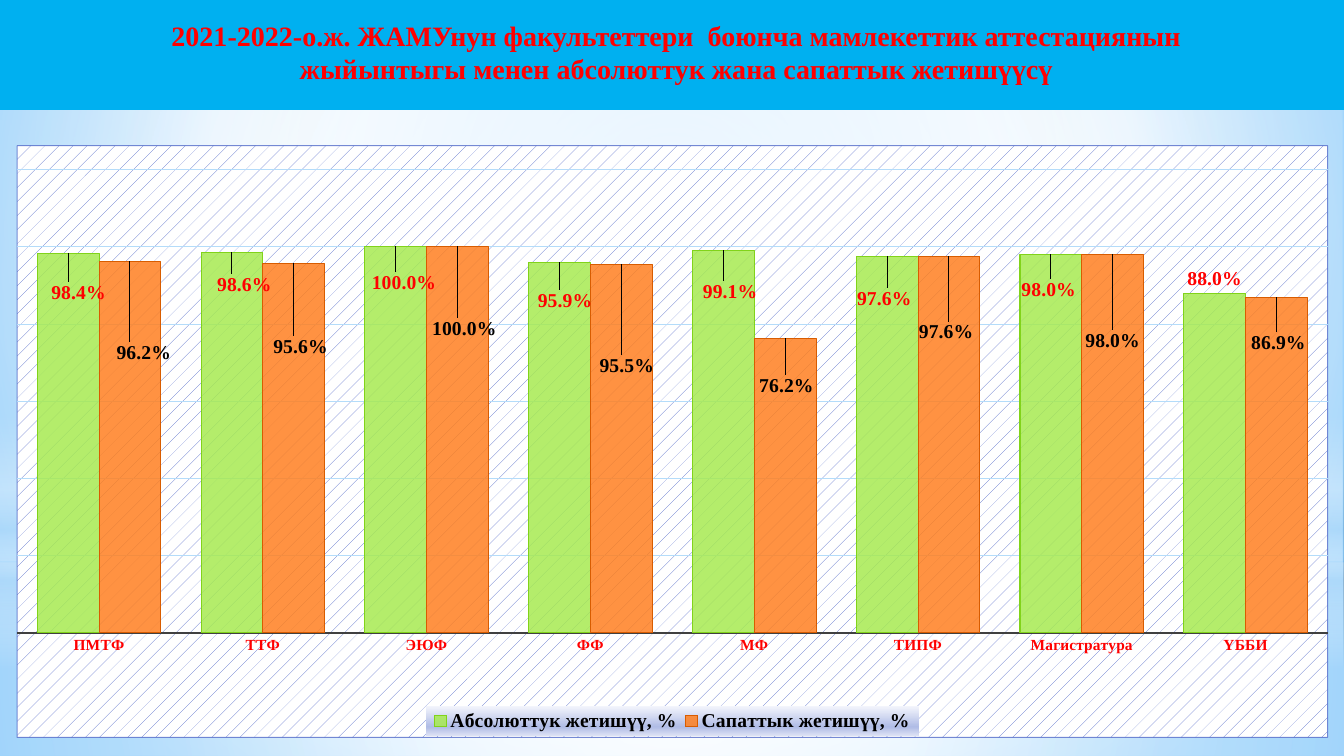
from pptx import Presentation
from pptx.chart.data import CategoryChartData
from pptx.dml.color import RGBColor
from pptx.enum.chart import XL_CHART_TYPE, XL_LABEL_POSITION, XL_LEGEND_POSITION, XL_TICK_MARK
from pptx.enum.shapes import MSO_CONNECTOR, MSO_SHAPE
from pptx.enum.text import MSO_ANCHOR, MSO_AUTO_SIZE, PP_ALIGN
from pptx.oxml import parse_xml
from pptx.oxml.ns import nsdecls, qn
from pptx.util import Pt

CLUSTERED = XL_CHART_TYPE.COLUMN_CLUSTERED
OUTSIDE_END = XL_LABEL_POSITION.OUTSIDE_END
BOTTOM = XL_LEGEND_POSITION.BOTTOM
NO_TICK = XL_TICK_MARK.NONE
STRAIGHT = MSO_CONNECTOR.STRAIGHT
RECT, OVAL = MSO_SHAPE.RECTANGLE, MSO_SHAPE.OVAL
WIDTH, HEIGHT = 960, 540
CENTRE = (50, 50, 50, 50)

FACULTIES = ["ПМТФ", "ТТФ", "ЭЮФ", "ФФ", "МФ", "ТИПФ", "Магистратура", "ҮББИ"]
# name, values, fill, outline, label colour, label shifts in points
RESULTS = [
    ("Абсолюттук жетишүү, %", [0.984, 0.986, 1, 0.959, 0.991, 0.976, 0.98, 0.88],
     "A7EA52", "81D31A", "FF0000",
     [(7.5, 39), (9, 34), (6, 36), (4, 38), (5, 40), (-2, 41), (-1.5, 36)]),
    ("Сапаттык жетишүү, %", [0.962, 0.956, 1, 0.955, 0.762, 0.976, 0.98, 0.869],
     "FF8021", "D85C00", "000000",
     [(10, 76), (5, 70), (5, 69), (4, 83), (1, 44), (-2, 65), (0, 72), (1.5, 43)]),
]


def rgb(code):
    return RGBColor.from_string(code)


def gradient(stops, to=None):
    """Gradient of (position, colour, opacity) stops; radial when to is given."""
    marks = "".join(
        f'<a:gs pos="{pos * 1000}"><a:srgbClr val="{code}">'
        f'<a:alpha val="{alpha * 1000}"/></a:srgbClr></a:gs>' for pos, code, alpha in stops)
    if to:
        sides = " ".join(f'{side}="{n * 1000}"' for side, n in zip("ltrb", to))
        shade = f'<a:path path="circle"><a:fillToRect {sides}/></a:path>'
    else:
        shade = '<a:lin ang="5400000" scaled="0"/>'
    return f'<a:gradFill {nsdecls("a")} rotWithShape="1"><a:gsLst>{marks}</a:gsLst>{shade}</a:gradFill>'


def manual_layout(**parts):
    tags = "".join(f'<c:{tag} val="{val}"/>' for tag, val in parts.items())
    return f'<c:layout {nsdecls("c")}><c:manualLayout>{tags}</c:manualLayout></c:layout>'


class Board:
    def __init__(self, slide, font):
        self.slide, self.font = slide, font

    def style(self, font, size, colour, bold=True):
        font.name, font.size, font.bold = self.font, Pt(size), bold
        font.color.rgb = rgb(colour)

    def backdrop(self, stops, to):
        fill = self.slide.background.fill
        fill.gradient()
        properties = self.slide.background._cSld.bg.bgPr
        old = properties.find(qn("a:gradFill"))
        properties.replace(old, parse_xml(gradient(stops, to)))

    def glow(self, kind, top, height, stops, to=None):
        shape = self.slide.shapes.add_shape(kind, 0, Pt(top), Pt(WIDTH), Pt(height))
        shape.shadow.inherit = False
        shape.line.fill.background()
        shape.fill.gradient()
        properties = shape._element.spPr
        properties.replace(properties.find(qn("a:gradFill")), parse_xml(gradient(stops, to)))

    def band(self, y, weight, colour):
        line = self.slide.shapes.add_connector(STRAIGHT, 0, Pt(y), Pt(WIDTH), Pt(y))
        line.line.color.rgb = rgb(colour)
        line.line.width = Pt(weight)
        line._element.spPr.append(parse_xml(f'<a:effectLst {nsdecls("a")}/>'))

    def title(self, words, left, top, width, height, size, colour):
        box = self.slide.shapes.add_textbox(Pt(left), Pt(top), Pt(width), Pt(height))
        frame = box.text_frame
        frame.word_wrap = True
        frame.auto_size = MSO_AUTO_SIZE.SHAPE_TO_FIT_TEXT
        frame.vertical_anchor = MSO_ANCHOR.TOP
        paragraph = frame.paragraphs[0]
        paragraph.alignment = PP_ALIGN.CENTER
        run = paragraph.add_run()
        run.text = words
        self.style(run.font, size, colour)

    def columns(self, left, top, width, height):
        data = CategoryChartData(number_format="0.0%")
        data.categories = FACULTIES
        for name, values, *_ in RESULTS:
            data.add_series(name, values)
        chart = self.slide.shapes.add_chart(
            CLUSTERED, Pt(left), Pt(top), Pt(width), Pt(height), data).chart
        chart.has_title = False
        chart.font.name, chart.font.size = "Cabin", Pt(10)
        chart.font.color.rgb = rgb("000000")
        self.frame(chart)
        self.axes(chart)
        self.legend(chart)
        plot = chart.plots[0]
        plot.gap_width, plot.overlap, plot.vary_by_categories = 65, 0, False
        for series, (_, _, fill, outline, ink, shifts) in zip(plot.series, RESULTS):
            series.format.fill.solid()
            series.format.fill.fore_color.rgb = rgb(fill)
            colour = series._element.spPr.find(".//" + qn("a:srgbClr"))
            colour.append(parse_xml(f'<a:alpha {nsdecls("a")} val="85000"/>'))
            series.format.line.color.rgb = rgb(outline)
            series.format.line.width = Pt(0.75)
            self.labels(series, ink, [(x / width, y / height) for x, y in shifts])

    def frame(self, chart):
        body = chart._chartSpace.find(qn("c:chart"))
        body.addnext(parse_xml(
            f'<c:spPr {nsdecls("c", "a")}><a:pattFill prst="pct5">'
            '<a:fgClr><a:srgbClr val="4E67C8"/></a:fgClr>'
            '<a:bgClr><a:srgbClr val="FFFFFF"/></a:bgClr></a:pattFill>'
            '<a:ln w="9525"><a:solidFill><a:srgbClr val="4E67C8"><a:alpha val="76000"/>'
            '</a:srgbClr></a:solidFill></a:ln></c:spPr>'))
        area = body.find(qn("c:plotArea"))
        for old in area.findall(qn("c:layout")):
            area.remove(old)
        area.insert(0, parse_xml(manual_layout(
            layoutTarget="inner", xMode="edge", yMode="edge", x=0, y=0.041, w=1, h=0.782)))

    def axes(self, chart):
        faculties, shares = chart.category_axis, chart.value_axis
        faculties.major_tick_mark = faculties.minor_tick_mark = NO_TICK
        self.style(faculties.tick_labels.font, 11, "FF0000")
        faculties.format.line.color.rgb = rgb("404040")
        faculties.format.line.width = Pt(1.5)
        shares.minimum_scale, shares.maximum_scale, shares.major_unit = 0, 1.2, 0.2
        shares.visible = False
        shares.has_major_gridlines = True
        shares.major_gridlines.format.line.color.rgb = rgb("B4DCFA")
        shares.major_gridlines.format.line.width = Pt(0.75)

    def legend(self, chart):
        chart.has_legend = True
        legend = chart.legend
        legend.position, legend.include_in_layout = BOTTOM, False
        self.style(legend.font, 14, "000000")
        element = legend._element
        for old in element.findall(qn("c:layout")):
            element.remove(old)
        overlay = element.find(qn("c:overlay"))
        overlay.addprevious(parse_xml(manual_layout(
            xMode="edge", yMode="edge", x=0.312, y=0.95, w=0.376, h=0.05)))
        shade = gradient([(0, "F3F5FC", 100), (70, "B0BCE6", 100), (100, "DCE1F4", 100)])
        overlay.addnext(parse_xml(f'<c:spPr {nsdecls("c", "a")}>{shade}</c:spPr>'))

    def labels(self, series, ink, shifts):
        labels = series.data_labels
        labels.show_value = True
        labels.number_format, labels.number_format_is_linked = "0.0%", False
        labels.position = OUTSIDE_END
        self.style(labels.font, 14, ink)
        group = series._element.find(qn("c:dLbls"))
        flags = "".join(f'<c:show{part} val="{int(part == "Val")}"/>' for part in
                        ("LegendKey", "Val", "CatName", "SerName", "Percent", "BubbleSize"))
        for index, (x, y) in enumerate(shifts):
            group.insert(index, parse_xml(
                f'<c:dLbl {nsdecls("c")}><c:idx val="{index}"/>'
                f'{manual_layout(x=round(x, 4), y=round(y, 4))}'
                f'<c:dLblPos val="outEnd"/>{flags}</c:dLbl>'))


def main():
    deck = Presentation()
    deck.slide_width, deck.slide_height = Pt(WIDTH), Pt(HEIGHT)
    board = Board(deck.slides.add_slide(deck.slide_layouts[6]), "Times New Roman")

    # Sky background
    board.backdrop([(0, "9ED5FF", 100), (60, "FFFFFF", 100), (100, "5BB9FF", 100)],
                   (20, 10, 20, 60))
    board.glow(RECT, 402, 138, [(0, "FFFFFF", 91), (37, "FFFFFF", 76), (100, "B4DCFA", 79)], CENTRE)
    board.glow(RECT, 0, 402, [(0, "FFFFFF", 89), (48, "FFFFFF", 62), (100, "B4DCFA", 79)], CENTRE)
    board.glow(RECT, 297, 180, [(0, "FFFFFF", 0), (29, "FFFFFF", 30), (45, "B4DCFA", 40),
                                (55, "FFFFFF", 26), (65, "B4DCFA", 60), (100, "FFFFFF", 0)])
    board.glow(OVAL, 126, 402, [(0, "FFFFFF", 100), (56, "FFFFFF", 0)], CENTRE)

    # Title band
    for y in (15.84, 55.44):
        board.band(y, 46.25, "00B0F0")

    # Results by faculty
    board.columns(11.5, 103.7, 937.5, 423.4)

    # Title
    board.title("2021-2022-о.ж. ЖАМУнун факультеттери  боюнча мамлекеттик аттестациянын "
                "жыйынтыгы менен абсолюттук жана сапаттык жетишүүсү",
                111.6, 9.4, 743, 55.7, 20, "FF0000")
    deck.save("out.pptx")


if __name__ == "__main__":
    main()
